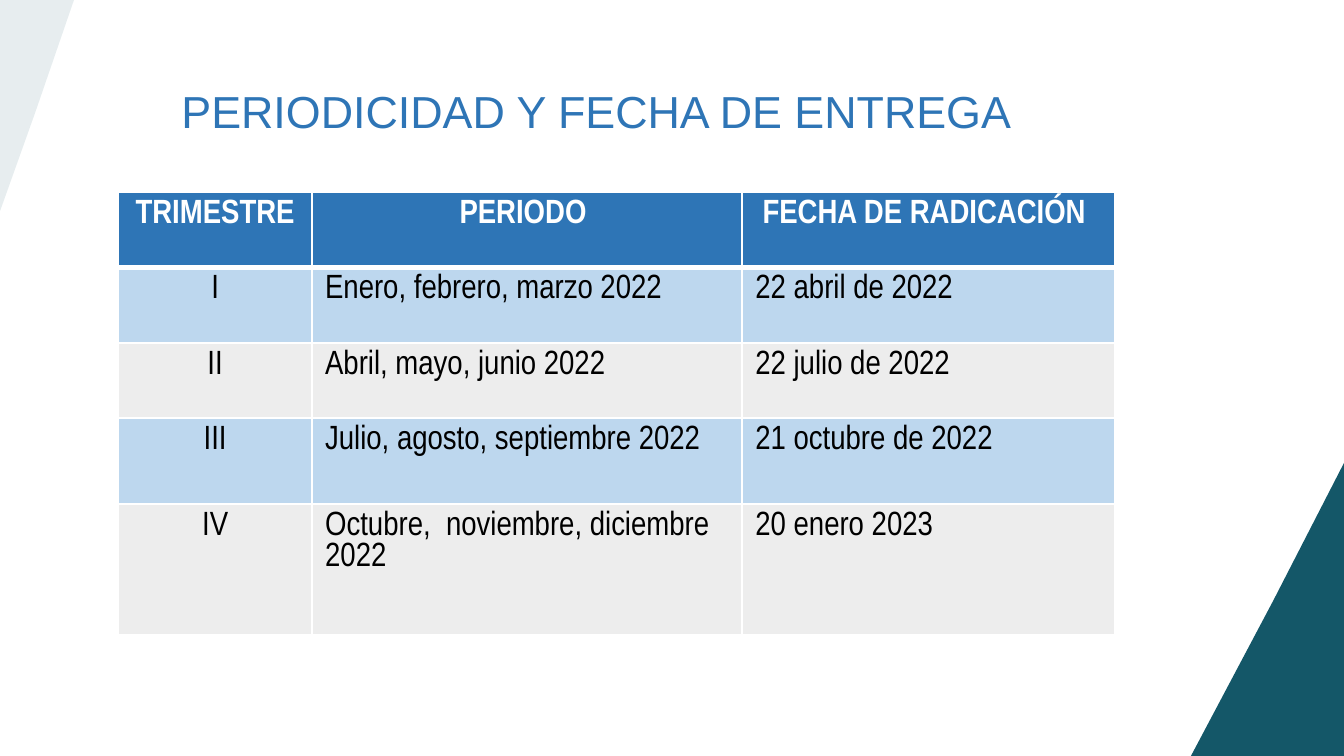
import pptx
import pptx.dml.color
import pptx.enum.text
import pptx.oxml
import pptx.oxml.ns
import pptx.util
from lxml import etree

Pt = pptx.util.Pt
RGBColor = pptx.dml.color.RGBColor
Align = pptx.enum.text.PP_ALIGN

TEAL = RGBColor(0x14, 0x57, 0x68)
BLUE = RGBColor(0x2E, 0x75, 0xB6)
LIGHT_BLUE = RGBColor(0xBD, 0xD7, 0xEE)
LIGHT_GRAY = RGBColor(0xED, 0xED, 0xED)
WHITE = RGBColor(0xFF, 0xFF, 0xFF)
BLACK = RGBColor(0, 0, 0)

TITLE = "PERIODICIDAD Y FECHA DE ENTREGA"
ROWS = [
    ("TRIMESTRE", "PERIODO ", "FECHA DE RADICACIÓN "),
    ("I", "Enero, febrero, marzo 2022", "22 abril de 2022"),
    ("II", "Abril, mayo, junio 2022", "22 julio de 2022"),
    ("III", "Julio, agosto, septiembre 2022", "21 octubre de 2022"),
    ("IV", "Octubre,  noviembre, diciembre 2022", "20 enero 2023"),
]
COLUMN_WIDTHS = [103.5, 230.5, 199.5]
ROW_HEIGHTS = [40.3, 40.3, 40.3, 46.1, 69.8]
TABLE_LEFT, TABLE_TOP = 63.5, 103.2

# Corner points and opacity in percent
CORNERS = [
    ([(681.8, 322.5), (720, 247.5), (719.5, 405), (638, 405)], 100),
    ([(18.7, 59.8), (-0.7, 116), (-0.7, -1.4), (40.3, -1.4)], 10),
]


def apply_format(target, values):
    for name, value in values.items():
        setattr(target, name, value)


def format_font(font, color, **values):
    apply_format(font, values)
    font.color.rgb = color


def add_corner(slide, points, opacity):
    builder = slide.shapes.build_freeform(*points[0], scale=float(Pt(1)))
    builder.add_line_segments(points[1:], close=True)
    corner = builder.convert_to_shape()
    corner.shadow.inherit = False
    corner.fill.solid()
    corner.fill.fore_color.rgb = TEAL
    corner.line.fill.background()
    if opacity < 100:
        qn = pptx.oxml.ns.qn
        color = corner.fill._xPr.find(qn("a:solidFill")).find(qn("a:srgbClr"))
        etree.SubElement(color, qn("a:alpha"), val=str(opacity * 1000))


def add_borders(cell, widths):
    """Append white borders; widths maps a side (L, R, T, B) to points."""
    properties = cell._tc.get_or_add_tcPr()
    for side, width in widths.items():
        properties.append(pptx.oxml.parse_xml(
            f'<a:ln{side} {pptx.oxml.ns.nsdecls("a")} w="{Pt(width)}">'
            f'<a:solidFill><a:srgbClr val="{WHITE}"/></a:solidFill></a:ln{side}>'
        ))


def fill_cell(cell, text, row, column):
    header = row == 0
    add_borders(cell, {"L": 1, "R": 1, "T": 3 if row == 1 else 1, "B": 3 if header else 1})
    cell.fill.solid()
    cell.fill.fore_color.rgb = BLUE if header else (LIGHT_GRAY, LIGHT_BLUE)[row % 2]
    cell.text = text
    para = cell.text_frame.paragraphs[0]
    para.alignment = Align.CENTER if header or column == 0 else Align.LEFT
    format_font(para.runs[0].font, WHITE if header else BLACK,
                name="Arial Narrow", size=Pt(18), bold=header)


def add_schedule(slide):
    frame = slide.shapes.add_table(
        len(ROWS), len(COLUMN_WIDTHS), Pt(TABLE_LEFT), Pt(TABLE_TOP),
        Pt(sum(COLUMN_WIDTHS)), Pt(sum(ROW_HEIGHTS)))
    table = frame.table
    for column, width in zip(table.columns, COLUMN_WIDTHS):
        column.width = Pt(width)
    for row, height in zip(table.rows, ROW_HEIGHTS):
        row.height = Pt(height)
    for row, texts in enumerate(ROWS):
        for column, text in enumerate(texts):
            fill_cell(table.cell(row, column), text, row, column)


def format_title(title):
    apply_format(title, {"left": Pt(90), "top": Pt(44.6),
                         "width": Pt(501), "height": Pt(44)})
    apply_format(title.text_frame, {
        "text": TITLE, "word_wrap": True,
        "auto_size": pptx.enum.text.MSO_AUTO_SIZE.NONE,
        "vertical_anchor": pptx.enum.text.MSO_ANCHOR.TOP})
    para = title.text_frame.paragraphs[0]
    apply_format(para, {"alignment": Align.LEFT, "line_spacing": 0.9})
    format_font(para.runs[0].font, BLUE, name="Arial", size=Pt(24))


def main():
    deck = pptx.Presentation()
    deck.slide_width, deck.slide_height = Pt(720), Pt(405)
    slide = deck.slides.add_slide(deck.slide_layouts[5])
    for points, opacity in CORNERS:
        add_corner(slide, points, opacity)
    format_title(slide.shapes.title)
    add_schedule(slide)
    deck.save("out.pptx")


if __name__ == "__main__":
    main()
